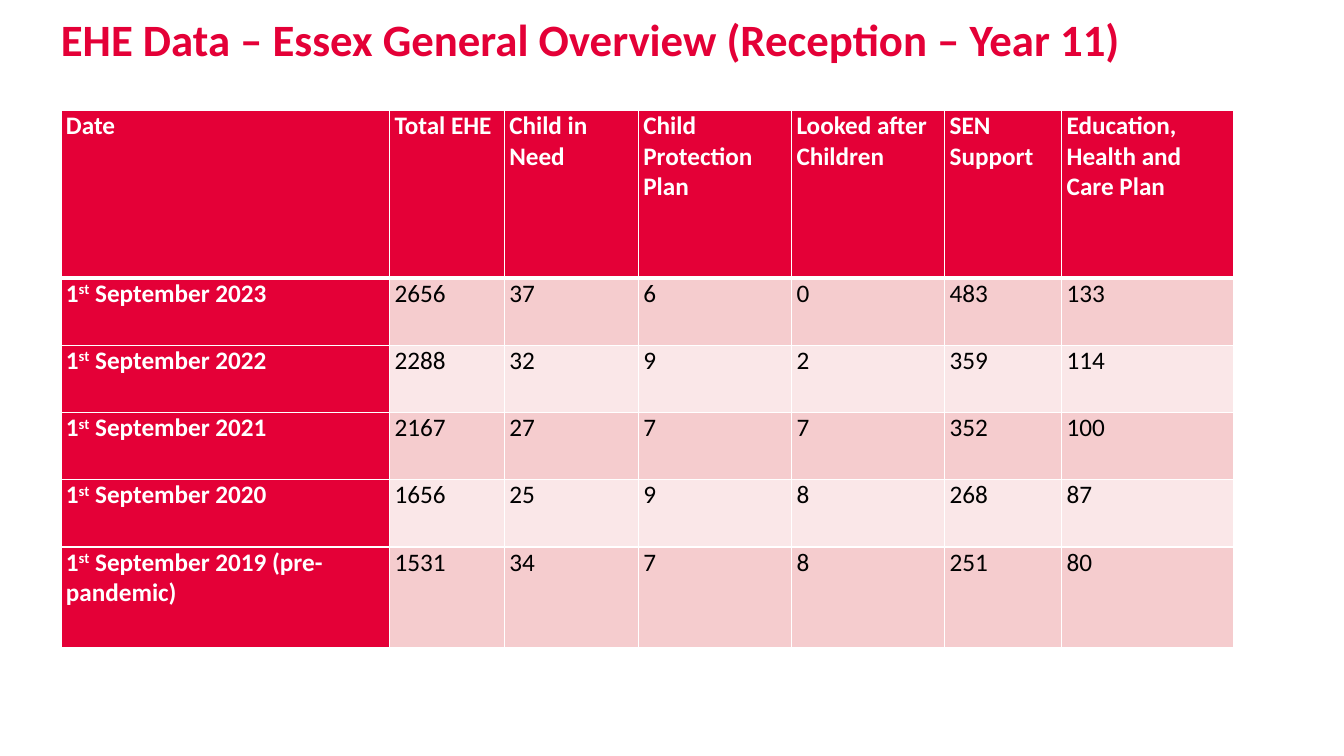
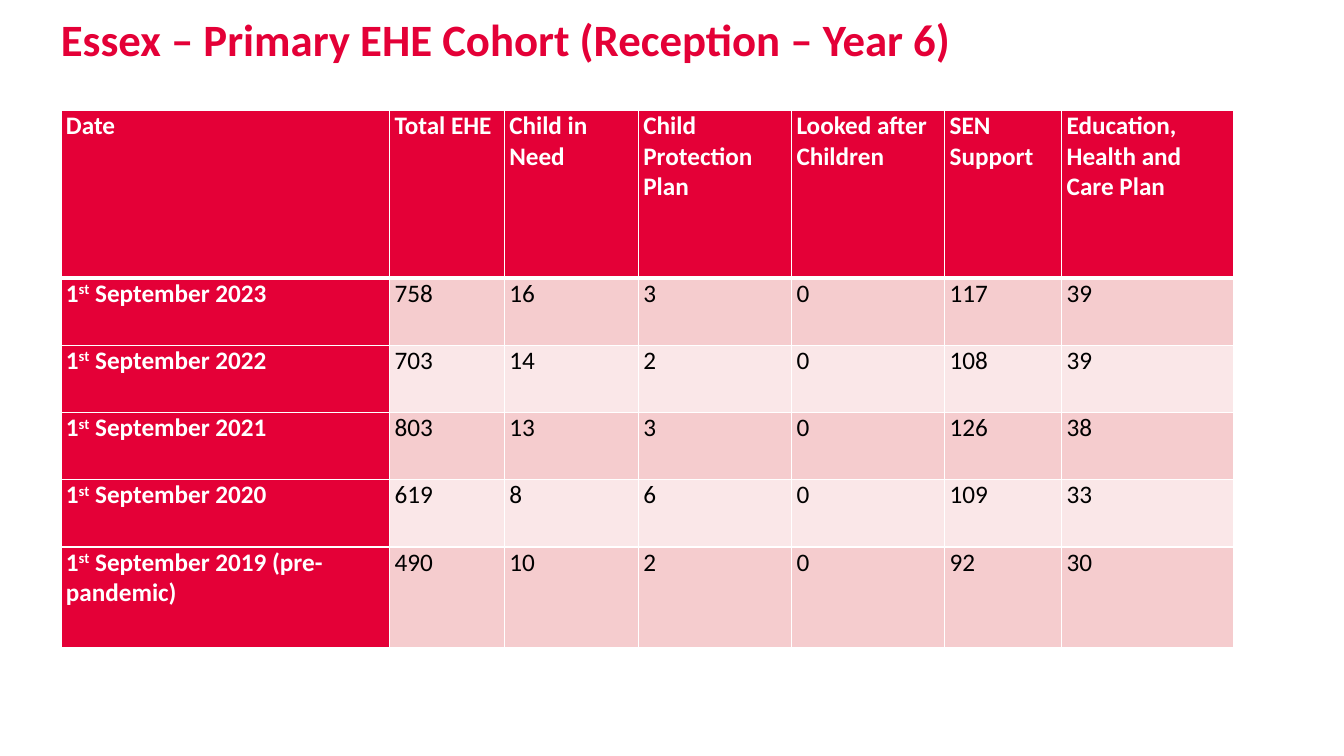
import dataclasses

import lxml.etree
import pptx
import pptx.dml.color
import pptx.enum.text
import pptx.oxml.ns
import pptx.util

Pt = pptx.util.Pt


# Theme: colours, type and line sizes
@dataclasses.dataclass(frozen=True)
class Theme:
    font: str = "Calibri"
    red: str = "E40037"
    white: str = "FFFFFF"
    black: str = "000000"
    bands: tuple = ("F5CCCE", "FAE7E8")
    title_size: float = 32
    table_size: float = 18
    thin: float = 1
    thick: float = 3


# Shared layout, in points
SLIDE_W, SLIDE_H = 960, 540
LEFT, WIDTH = 43.5, 838
TITLE_TOP, TITLE_H = 8.6, 83.5
TABLE_TOP = 78.8
COL_WIDTHS = (234.7, 82, 95.8, 109.4, 109.4, 83.6, 123.1)
ROW_HEIGHTS = (120, 48, 48, 48, 48, 72)
CELL_INSET = 3.6

# Content
HEADERS = ("Date", "Total EHE", "Child in Need", "Child Protection Plan",
           "Looked after Children", "SEN Support",
           "Education, Health and Care Plan")
DATES = ("September 2023", "September 2022", "September 2021",
         "September 2020", "September 2019 (pre-pandemic)")
SLIDES = (
    ("EHE Data – Essex General Overview (Reception – Year 11)",
     ((2656, 37, 6, 0, 483, 133),
      (2288, 32, 9, 2, 359, 114),
      (2167, 27, 7, 7, 352, 100),
      (1656, 25, 9, 8, 268, 87),
      (1531, 34, 7, 8, 251, 80))),
    ("Essex – Primary EHE Cohort (Reception – Year 6)",
     ((758, 16, 3, 0, 117, 39),
      (703, 14, 2, 0, 108, 39),
      (803, 13, 3, 0, 126, 38),
      (619, 8, 6, 0, 109, 33),
      (490, 10, 2, 0, 92, 30))),
)


class Deck:
    """Holds the style and the current slide."""

    def __init__(self, theme):
        self.theme = theme
        self.prs = pptx.Presentation()
        self.prs.slide_width, self.prs.slide_height = Pt(SLIDE_W), Pt(SLIDE_H)
        self.s = None

    def new_slide(self):
        self.s = self.prs.slides.add_slide(self.prs.slide_layouts.get_by_name("Title Only"))

    def format_runs(self, p, size, color, bold):
        for r in p.runs:
            r.font.name, r.font.size, r.font.bold = self.theme.font, Pt(size), bold
            r.font.color.rgb = pptx.dml.color.RGBColor.from_string(color)

    def title(self, text):
        sp = self.s.shapes.title
        sp.left, sp.top = Pt(LEFT), Pt(TITLE_TOP)
        sp.width, sp.height = Pt(WIDTH), Pt(TITLE_H)
        tf = sp.text_frame
        tf.margin_left = tf.margin_right = tf.margin_top = tf.margin_bottom = 0
        tf.vertical_anchor = pptx.enum.text.MSO_ANCHOR.TOP
        tf.auto_size = pptx.enum.text.MSO_AUTO_SIZE.NONE
        tf.word_wrap = True
        tf.text = text
        p = tf.paragraphs[0]
        p.alignment = pptx.enum.text.PP_ALIGN.LEFT
        self.format_runs(p, self.theme.title_size, self.theme.red, True)

    def borders(self, cell, top, bottom):
        """White cell edges; they precede the fill in the cell properties."""
        tc_pr = cell._tc.get_or_add_tcPr()
        qn = pptx.oxml.ns.qn
        edges = (("L", self.theme.thin), ("R", self.theme.thin), ("T", top), ("B", bottom))
        for i, (side, width) in enumerate(edges):
            ln = lxml.etree.Element(qn(f"a:ln{side}"), w=str(Pt(width)))
            fill = lxml.etree.SubElement(ln, qn("a:solidFill"))
            lxml.etree.SubElement(fill, qn("a:srgbClr"), val=self.theme.white)
            tc_pr.insert(i, ln)

    def date_text(self, p, date):
        for text in ("1", "st", f" {date}"):
            r = p.add_run()
            r.text = text
            if text == "st":
                r._r.get_or_add_rPr().set("baseline", "30000")

    def cell(self, cell, row, col, value):
        t = self.theme
        is_label = row == 0 or col == 0
        cell.margin_left = cell.margin_right = Pt(CELL_INSET)
        cell.margin_top = cell.margin_bottom = 0
        p = cell.text_frame.paragraphs[0]
        if row and col == 0:
            self.date_text(p, value)
        else:
            p.text = str(value)
        self.format_runs(p, t.table_size, t.white if is_label else t.black, is_label)
        self.borders(cell, t.thick if row == 1 else t.thin, t.thick if row == 0 else t.thin)
        cell.fill.solid()
        color = t.red if is_label else t.bands[(row - 1) % 2]
        cell.fill.fore_color.rgb = pptx.dml.color.RGBColor.from_string(color)

    def table(self, rows):
        table = self.s.shapes.add_table(
            len(ROW_HEIGHTS), len(COL_WIDTHS), Pt(LEFT), Pt(TABLE_TOP),
            Pt(WIDTH), Pt(sum(ROW_HEIGHTS))).table
        table.first_col = True
        for column, width in zip(table.columns, COL_WIDTHS):
            column.width = Pt(width)
        for i, (height, values) in enumerate(zip(ROW_HEIGHTS, rows)):
            table.rows[i].height = Pt(height)
            for j, value in enumerate(values):
                self.cell(table.cell(i, j), i, j, value)


def main():
    deck = Deck(Theme())
    for title, figures in SLIDES:
        deck.new_slide()
        deck.title(title)
        deck.table([HEADERS] + [(date, *row) for date, row in zip(DATES, figures)])
    deck.prs.save("out.pptx")


if __name__ == "__main__":
    main()
